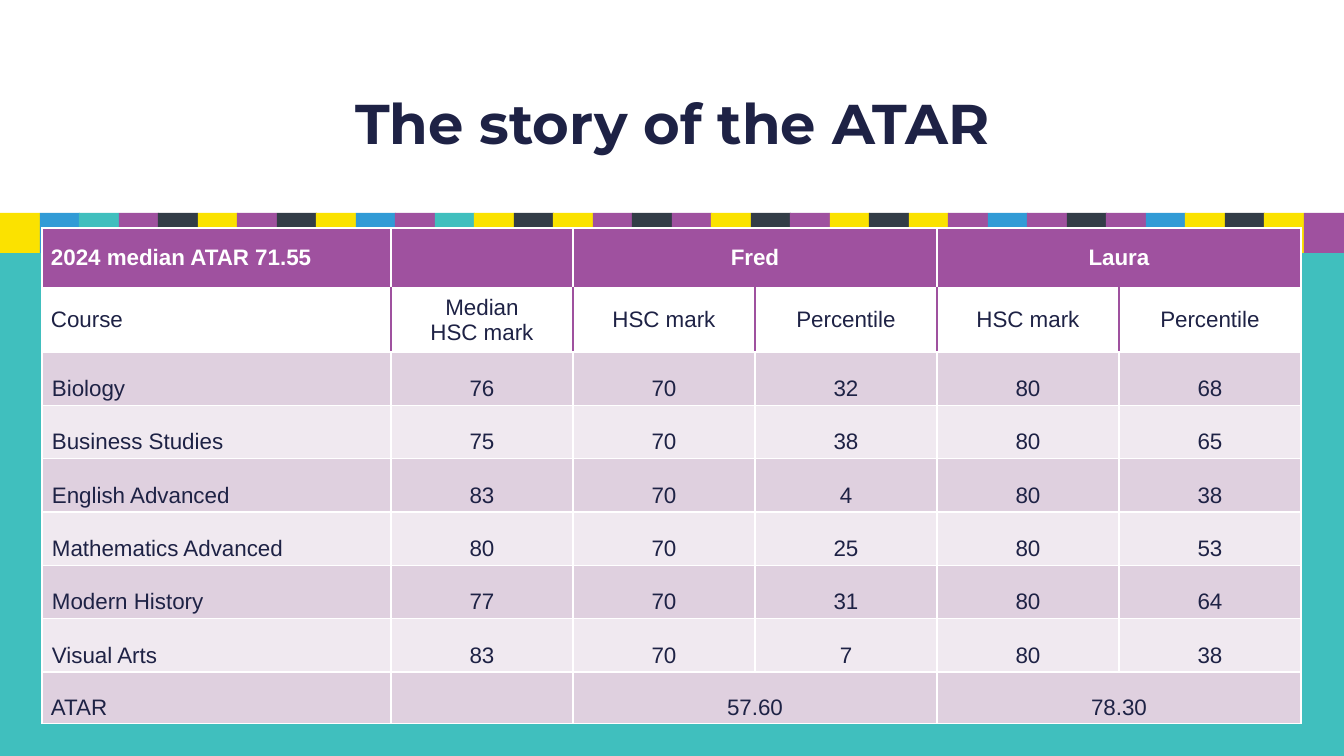
from dataclasses import dataclass
from typing import Optional, Union

import pptx
import pptx.dml.color
import pptx.enum.shapes
import pptx.enum.text
import pptx.oxml
import pptx.oxml.ns
import pptx.shapes.autoshape
import pptx.slide
import pptx.table
import pptx.text.text
import pptx.util

RGBColor = pptx.dml.color.RGBColor
PP_ALIGN = pptx.enum.text.PP_ALIGN
MIDDLE = pptx.enum.text.MSO_ANCHOR.MIDDLE

EMU_PER_PX = 914400 / 100.8
SLIDE_W, SLIDE_H = 1344, 756

WHITE = RGBColor(0xFF, 0xFF, 0xFF)
NAVY = RGBColor(0x1E, 0x22, 0x45)
TEAL = RGBColor(0x40, 0xBF, 0xBE)
YELLOW = RGBColor(0xFB, 0xE2, 0x00)
PURPLE = RGBColor(0x9F, 0x51, 0x9F)
BLUE = RGBColor(0x31, 0x9B, 0xD6)
SLATE = RGBColor(0x33, 0x3D, 0x47)
MAUVE = RGBColor(0xDF, 0xD0, 0xDF)
PALE_MAUVE = RGBColor(0xF0, 0xE9, 0xF0)

TILE_COLORS = {"Y": YELLOW, "B": BLUE, "T": TEAL, "P": PURPLE, "D": SLATE}
TILES = "YBTPDYPDYBPTYDYPDPYDPYDYPBPDPBYDYP"
TILE_SIZE = 40
TILE_TOP = 213

TABLE_LEFT, TABLE_TOP, TABLE_H = 42, 228, 450
COLUMN_WIDTHS = [349] + [182] * 5
TEXT_INDENT = 6
THIN, THICK = 1, 2.25


@dataclass(frozen=True)
class RowStyle:
    height: int
    fill: RGBColor
    color: RGBColor = NAVY
    bold: bool = False
    line_spacing: Optional[float] = None
    margin_x: int = 4
    margin_y: int = 4
    top: float = THIN
    bottom: float = THIN
    divider: RGBColor = WHITE


@dataclass(frozen=True)
class Row:
    style: RowStyle
    texts: tuple[str, ...]
    paired: bool = False


HEADER = RowStyle(60, PURPLE, WHITE, True, margin_x=3, margin_y=1, bottom=THICK)
SUBHEADER = RowStyle(64, WHITE, margin_x=3, margin_y=3, top=THICK,
                     bottom=THICK, divider=PURPLE)
FIRST = RowStyle(39, MAUVE, line_spacing=32.4, top=THICK)
DARK = RowStyle(39, MAUVE, line_spacing=32.4)
LIGHT = RowStyle(39, PALE_MAUVE, line_spacing=32.4)
TOTAL = RowStyle(39, MAUVE, line_spacing=32.4, margin_x=3, margin_y=3)

ROWS = [
    Row(HEADER, ("2024 median ATAR 71.55", "", "Fred", "", "Laura", ""), True),
    Row(SUBHEADER, ("Course", "Median\nHSC mark", "HSC mark", "Percentile",
                    "HSC mark", "Percentile")),
    Row(FIRST, ("Biology", "76", "70", "32", "80", "68")),
    Row(LIGHT, ("Business Studies", "75", "70", "38", "80", "65")),
    Row(DARK, ("English Advanced", "83", "70", "4", "80", "38")),
    Row(LIGHT, ("Mathematics Advanced", "80", "70", "25", "80", "53")),
    Row(DARK, ("Modern History", "77", "70", "31", "80", "64")),
    Row(LIGHT, ("Visual Arts", "83", "70", "7", "80", "38")),
    Row(TOTAL, ("ATAR", "", "57.60", "", "78.30", ""), True),
]


def px(n: int) -> pptx.util.Emu:
    return pptx.util.Emu(round(n * EMU_PER_PX))


def write(tf: pptx.text.text.TextFrame, text: str, *, size: int, font: str,
          color: RGBColor, bold: bool, align: PP_ALIGN,
          line_spacing: Union[float, pptx.util.Pt, None] = None) -> None:
    """Fill a text frame with one paragraph per line of text."""
    for i, line in enumerate(text.split("\n")):
        p = tf.paragraphs[0] if i == 0 else tf.add_paragraph()
        p.alignment = align
        p.line_spacing = line_spacing
        r = p.add_run()
        r.text = line
        r.font.size = pptx.util.Pt(size)
        r.font.name = font
        r.font.bold = bold
        r.font.color.rgb = color


def add_rect(s: pptx.slide.Slide, left: int, top: int, width: int, height: int,
             color: RGBColor) -> None:
    sp = s.shapes.add_shape(pptx.enum.shapes.MSO_SHAPE.RECTANGLE,
                            px(left), px(top), px(width), px(height))
    sp.shadow.inherit = False
    sp.fill.solid()
    sp.fill.fore_color.rgb = color
    sp.line.fill.background()


def add_tiles(s: pptx.slide.Slide) -> None:
    """Spread the tiles evenly from one slide edge to the other."""
    step = (SLIDE_W - TILE_SIZE) / (len(TILES) - 1)
    for i, key in enumerate(TILES):
        add_rect(s, round(i * step), TILE_TOP, TILE_SIZE, TILE_SIZE,
                 TILE_COLORS[key])


def add_title(s: pptx.slide.Slide) -> None:
    sp = s.shapes.add_textbox(px(93), px(60), px(1159), px(133))
    tf = sp.text_frame
    tf.word_wrap = True
    tf.vertical_anchor = MIDDLE
    write(tf, "The story of the ATAR", size=40, font="Montserrat", color=NAVY,
          bold=True, align=PP_ALIGN.CENTER, line_spacing=0.9)


def set_borders(cell: pptx.table._Cell, style: RowStyle, col: int) -> None:
    last = len(COLUMN_WIDTHS) - 1
    edges = {
        "lnL": (THIN, WHITE if col == 0 else style.divider),
        "lnR": (THIN, WHITE if col == last else style.divider),
        "lnT": (style.top, WHITE),
        "lnB": (style.bottom, WHITE),
    }
    tc_pr = cell._tc.get_or_add_tcPr()
    for tag, (width, color) in edges.items():
        tc_pr.append(pptx.oxml.parse_xml(
            f'<a:{tag} {pptx.oxml.ns.nsdecls("a")} w="{pptx.util.Pt(width)}">'
            f'<a:solidFill><a:srgbClr val="{color}"/></a:solidFill></a:{tag}>'))


def format_cell(cell: pptx.table._Cell, style: RowStyle, col: int,
                text: str) -> None:
    set_borders(cell, style, col)
    cell.fill.solid()
    cell.fill.fore_color.rgb = style.fill
    cell.vertical_anchor = MIDDLE
    cell.margin_left = px(style.margin_x + (TEXT_INDENT if col == 0 else 0))
    cell.margin_right = px(style.margin_x)
    cell.margin_top = cell.margin_bottom = px(style.margin_y)
    if text:
        spacing = pptx.util.Pt(style.line_spacing) if style.line_spacing else None
        write(cell.text_frame, text, size=16, font="Arial", color=style.color,
              bold=style.bold, line_spacing=spacing,
              align=PP_ALIGN.LEFT if col == 0 else PP_ALIGN.CENTER)


def add_marks_table(s: pptx.slide.Slide) -> None:
    frame = s.shapes.add_table(len(ROWS), len(COLUMN_WIDTHS), px(TABLE_LEFT),
                               px(TABLE_TOP), px(sum(COLUMN_WIDTHS)), px(TABLE_H))
    table = frame.table
    table.first_row = table.horz_banding = False
    for column, width in zip(table.columns, COLUMN_WIDTHS):
        column.width = px(width)
    for i, row in enumerate(ROWS):
        table.rows[i].height = px(row.style.height)
        for col, text in enumerate(row.texts):
            format_cell(table.cell(i, col), row.style, col, text)
        if row.paired:
            for col in (2, 4):
                table.cell(i, col).merge(table.cell(i, col + 1))
    frame.height = px(TABLE_H)


def main() -> None:
    prs = pptx.Presentation()
    prs.slide_width, prs.slide_height = px(SLIDE_W), px(SLIDE_H)
    s = prs.slides.add_slide(prs.slide_layouts[6])
    s.background.fill.solid()
    s.background.fill.fore_color.rgb = TEAL
    add_rect(s, 0, 0, SLIDE_W, 219, WHITE)
    add_tiles(s)
    add_title(s)
    add_marks_table(s)
    prs.save("out.pptx")


if __name__ == "__main__":
    main()
